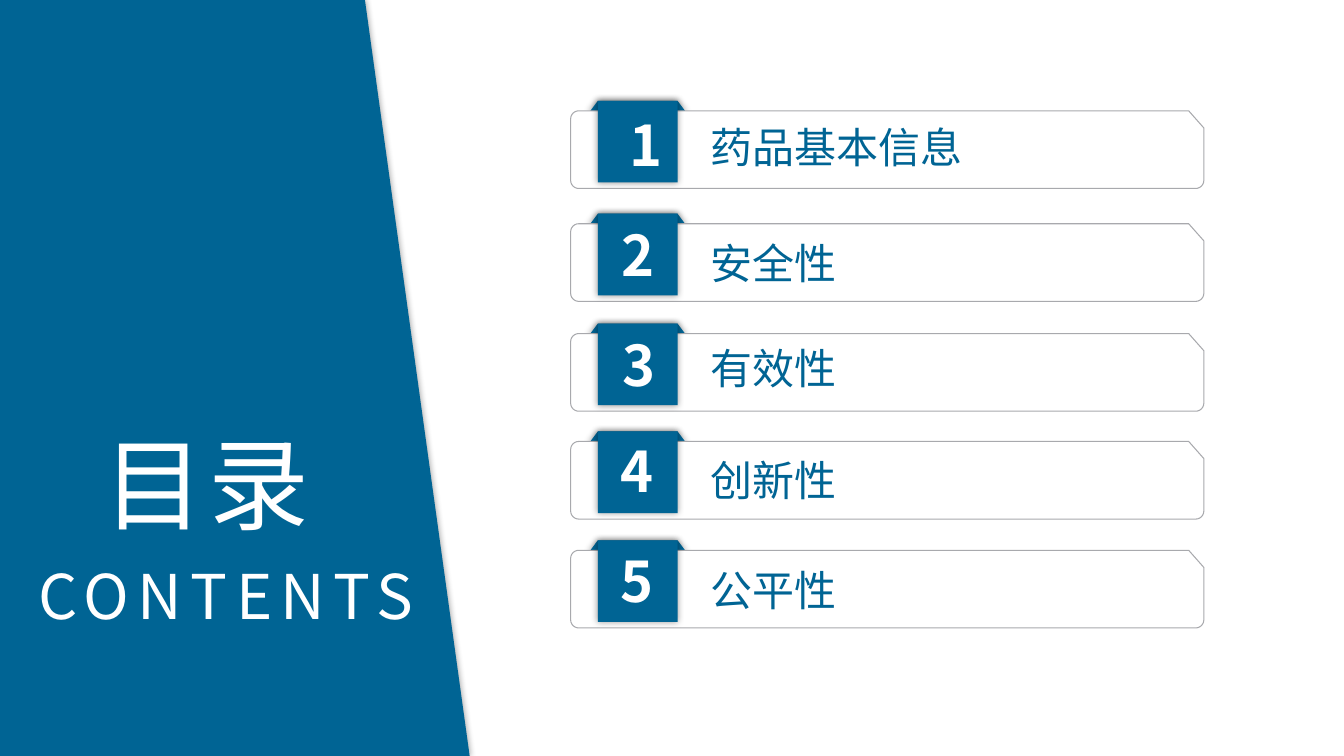
import math
from dataclasses import dataclass

from lxml import etree
from pptx import Presentation
from pptx.dml.color import RGBColor
from pptx.enum.shapes import MSO_SHAPE
from pptx.enum.text import MSO_ANCHOR, MSO_AUTO_SIZE, PP_ALIGN
from pptx.oxml.ns import qn
from pptx.util import Emu, Pt

RECT = MSO_SHAPE.RECTANGLE
TOP = MSO_ANCHOR.TOP
GROW = MSO_AUTO_SIZE.SHAPE_TO_FIT_TEXT
LEFT, CENTER = PP_ALIGN.LEFT, PP_ALIGN.CENTER

SCALE = 9144  # EMU per px, 100 px to the inch
FONT = "Noto Sans CJK SC"
COLORS = {"blue": "006494", "white": "FFFFFF", "grey": "A8A9AD", "black": "000000"}

CARD_X, CARD_W, CARD_H, CARD_DROP = 566, 628, 77, 10
NOTCH_W, NOTCH_H, RADIUS, ARC_STEPS = 15, 17, 8, 6
TAB_X, TAB_W, TAB_H = 593, 79, 81
FOLD_W, FOLD_H = 9, 12
LABEL_X, LABEL_H, NUMBER_H = 695, 61, 77

Points = list[tuple[float, float]]


@dataclass
class Entry:
    label: str
    top: int
    label_top: int
    label_w: int
    number_top: int
    number_x: int
    number_w: int


ENTRIES = [
    Entry("药品基本信息", 100, 116, 273, 105, 615, 33),
    Entry("安全性", 212, 231, 146, 214, 607, 50),
    Entry("有效性", 321, 335, 146, 323, 608, 49),
    Entry("创新性", 428, 446, 146, 428, 606, 51),
    Entry("公平性", 536, 555, 146, 537, 606, 51),
]


def px(n: float) -> Emu:
    return Emu(round(n * SCALE))


def rgb(name: str) -> RGBColor:
    return RGBColor.from_string(COLORS[name])


def paint(sp, fill: str, line: str = "", shadow: bool = False) -> None:
    sp.fill.solid()
    sp.fill.fore_color.rgb = rgb(fill)
    if line:
        sp.line.color.rgb = rgb(line)
        sp.line.width = 0
    else:
        sp.line.fill.background()
    sp.shadow.inherit = False
    if shadow:
        effects = sp._element.spPr.find(qn("a:effectLst"))
        outer = etree.SubElement(effects, qn("a:outerShdw"), blurRad=str(Pt(5)),
                                 dist="0", dir="0", algn="ctr", rotWithShape="0")
        color = etree.SubElement(outer, qn("a:srgbClr"), val=COLORS["black"])
        etree.SubElement(color, qn("a:alpha"), val="40000")


def add_outline(s, points: Points):
    start, *rest = [(px(x), px(y)) for x, y in points]
    builder = s.shapes.build_freeform(*start, scale=1.0)
    builder.add_line_segments(rest, close=True)
    return builder.convert_to_shape()


def corner(cx: float, cy: float, start: int) -> Points:
    angles = [math.radians(start + 90 * i / ARC_STEPS) for i in range(ARC_STEPS + 1)]
    return [(cx + RADIUS * math.cos(a), cy + RADIUS * math.sin(a)) for a in angles]


def card_points(top: int) -> Points:
    right, bottom = CARD_X + CARD_W, top + CARD_H
    inner_l, inner_r = CARD_X + RADIUS, right - RADIUS
    return [(right - NOTCH_W, top), (right, top + NOTCH_H),
            *corner(inner_r, bottom - RADIUS, 0),
            *corner(inner_l, bottom - RADIUS, 90),
            *corner(inner_l, top + RADIUS, 180)]


def write(sp, box: tuple[int, int, int, int], text: str, size: int, color: str,
          align=LEFT, bold: bool = False, spacing: int = 0,
          inset: tuple[int, int] = (10, 5)) -> None:
    sp.left, sp.top, sp.width, sp.height = map(px, box)
    tf = sp.text_frame
    frame = {"word_wrap": False, "auto_size": GROW, "vertical_anchor": TOP,
             "margin_left": px(inset[0]), "margin_right": px(inset[0]),
             "margin_top": px(inset[1]), "margin_bottom": px(inset[1])}
    for name, value in frame.items():
        setattr(tf, name, value)
    p = tf.paragraphs[0]
    p.alignment = align
    p.space_before = Pt(0)
    r = p.add_run()
    r.text = text
    for name, value in {"name": FONT, "size": Pt(size), "bold": bold}.items():
        setattr(r.font, name, value)
    r.font.color.rgb = rgb(color)
    rPr = r._r.get_or_add_rPr()
    etree.SubElement(rPr, qn("a:ea"), typeface=FONT)
    if spacing:
        rPr.set("spc", str(spacing * 100))


def add_entry(s, number: int, entry: Entry) -> None:
    top, right = entry.top, TAB_X + TAB_W
    # Folded edges behind the card
    fold = add_outline(s, [(TAB_X, top), (right, top), (right + FOLD_W, top + FOLD_H),
                           (TAB_X - FOLD_W, top + FOLD_H)])
    paint(fold, "blue", shadow=True)
    # Card and number tab
    paint(add_outline(s, card_points(top + CARD_DROP)), "white", line="grey")
    tab = s.shapes.add_shape(RECT, *map(px, (TAB_X, top, TAB_W, TAB_H)))
    paint(tab, "blue", shadow=True)
    # Label and number
    label_box = (LABEL_X, entry.label_top, entry.label_w, LABEL_H)
    write(s.shapes.add_textbox(0, 0, 0, 0), label_box, entry.label, 30, "blue")
    number_box = (entry.number_x, entry.number_top, entry.number_w, NUMBER_H)
    write(s.shapes.add_textbox(0, 0, 0, 0), number_box, str(number), 40, "white",
          align=CENTER, bold=True)


def main() -> None:
    prs = Presentation()
    prs.slide_width, prs.slide_height = px(1333), px(750)
    s = prs.slides.add_slide(prs.slide_layouts[0])
    title, subtitle = s.placeholders

    # Slanted panel, placed behind the headings
    panel = add_outline(s, [(0, 0), (362, 0), (466, 751), (0, 751)])
    paint(panel, "blue", shadow=True)
    title._element.addprevious(panel._element)

    # Headings
    write(title, (86, 411, 237, 135), "目录", 72, "white", CENTER, spacing=3, inset=(13, 7))
    write(subtitle, (11, 546, 426, 88), "CONTENTS", 44, "white", CENTER, spacing=6,
          inset=(13, 7))

    # Contents list
    for number, entry in enumerate(ENTRIES, start=1):
        add_entry(s, number, entry)

    prs.save("out.pptx")


if __name__ == "__main__":
    main()
